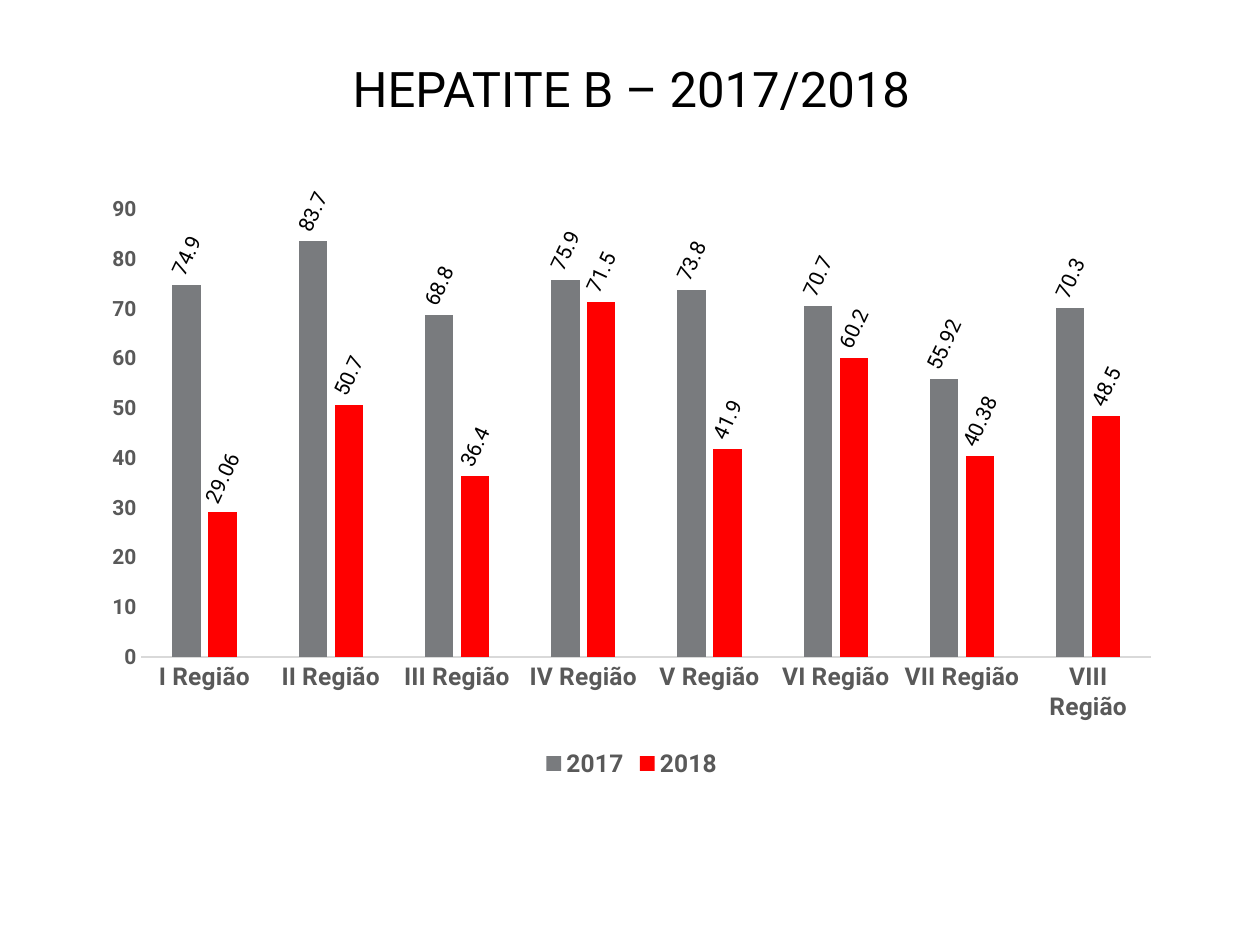
from pptx import Presentation
from pptx.chart.data import CategoryChartData
from pptx.dml.color import RGBColor
from pptx.enum.chart import XL_CHART_TYPE as ChartType, XL_LABEL_POSITION as LabelPos
from pptx.enum.chart import XL_LEGEND_POSITION as LegendPos, XL_TICK_MARK as TickMark
from pptx.enum.text import MSO_ANCHOR as Anchor, PP_ALIGN as Align
from pptx.oxml.ns import qn
from pptx.util import Inches, Pt


def paint(color_format, hex_color):
    color_format.rgb = RGBColor.from_string(hex_color)


def style(font, size, hex_color, bold=False):
    font.name = "Roboto"
    font.size = Pt(size)
    font.bold = bold
    paint(font.color, hex_color)


prs = Presentation()
prs.slide_width, prs.slide_height = Inches(10), Inches(7.5)
slide = prs.slides.add_slide(prs.slide_layouts[5])

title = slide.shapes.title
title.left, title.top = Inches(0.9), Inches(0.4)
title.width, title.height = Inches(8.22), Inches(0.6)
title.text_frame.vertical_anchor = Anchor.MIDDLE
heading = title.text_frame.paragraphs[0]
heading.alignment = Align.CENTER
heading_run = heading.add_run()
heading_run.text = "HEPATITE B – 2017/2018"
style(heading_run.font, 28, "000000")

rates = CategoryChartData()
rates.categories = [f"{n} Região" for n in "I II III IV V VI VII VIII".split()]
rates.add_series("2017", (74.9, 83.7, 68.8, 75.9, 73.8, 70.7, 55.92, 70.3))
rates.add_series("2018", (29.06, 50.7, 36.4, 71.5, 41.9, 60.2, 40.38, 48.5))
chart = slide.shapes.add_chart(
    ChartType.COLUMN_CLUSTERED, Inches(0.72), Inches(1.47), Inches(8.59), Inches(4.75), rates
).chart
style(chart.font, 10, "000000")
chart.has_title = False
chart.has_legend = True
chart.legend.position = LegendPos.BOTTOM
chart.legend.include_in_layout = False
style(chart.legend.font, 14, "595959", True)

regions, scale = chart.category_axis, chart.value_axis
for axis, size in ((regions, 14), (scale, 12)):
    axis.major_tick_mark = axis.minor_tick_mark = TickMark.NONE
    axis.has_major_gridlines = False
    style(axis.tick_labels.font, size, "595959", True)
regions.format.line.width = Pt(0.75)
paint(regions.format.line.color, "D9D9D9")
scale.format.line.fill.background()

bars = chart.plots[0]
bars.gap_width, bars.overlap = 219, -27
bars.vary_by_categories = False
for year, hex_color in zip(bars.series, ("797B7E", "FF0000")):
    year.format.fill.solid()
    paint(year.format.fill.fore_color, hex_color)
    labels = year.data_labels
    labels.show_value = True
    labels.position = LabelPos.OUTSIDE_END
    style(labels.font, 12, "000000")
    label_body = year._element.find(".//" + qn("a:bodyPr"))
    label_body.set("rot", str(-65 * 60000))
    label_body.set("vert", "horz")

prs.save("out.pptx")
